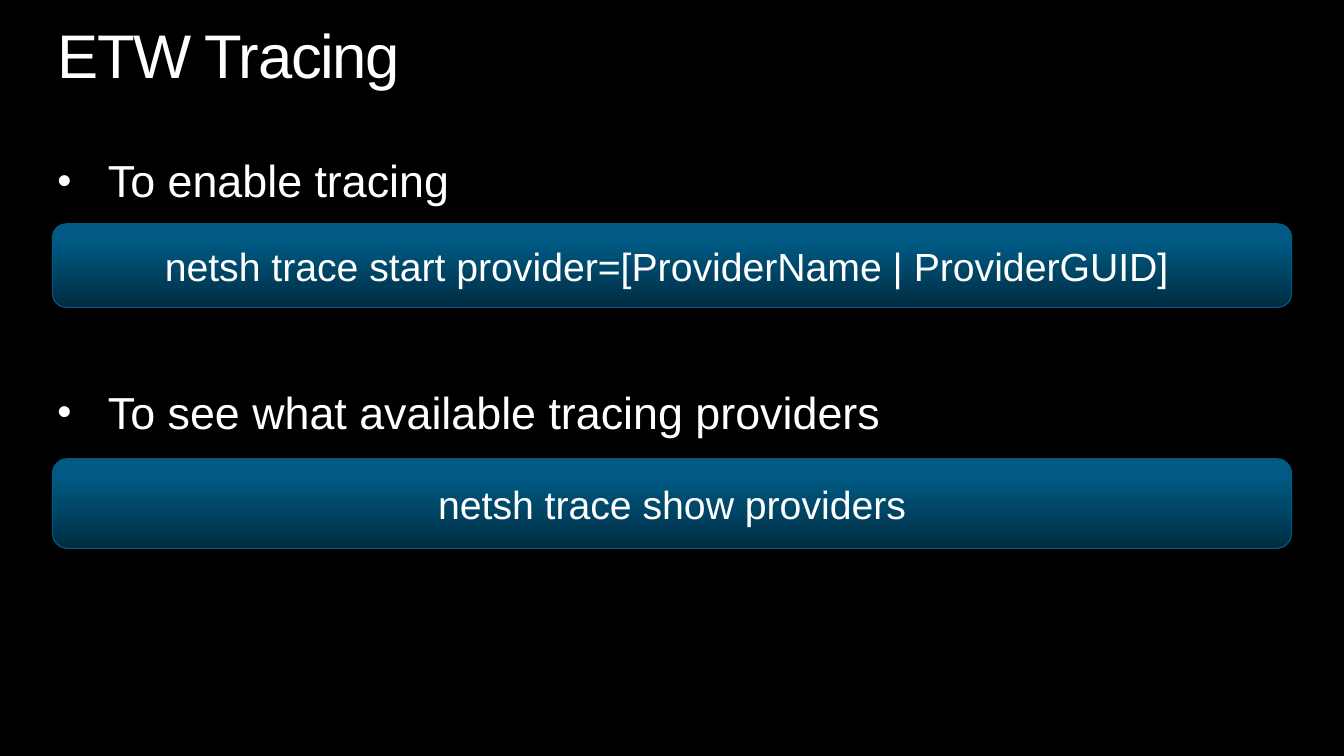
from lxml import etree
from pptx import Presentation
from pptx import util as u
from pptx.dml.color import RGBColor
from pptx.enum import shapes, text
from pptx.oxml.ns import qn

BLACK = RGBColor(0x00, 0x00, 0x00)
WHITE = RGBColor(0xFF, 0xFF, 0xFF)
BLUE = RGBColor(0x00, 0x5A, 0x84)
NAVY = RGBColor(0x00, 0x2D, 0x42)
FONT = "Arial"

SLIDE_W, SLIDE_H = 13.33, 7.5
TEXT_LEFT, TEXT_WIDTH = 0.57, 12.19
BAR_LEFT, BAR_WIDTH = 0.52, 12.29
BULLET_INDENT = 0.5
TOPIC_GAP = 130.5  # points between the two topics, leaving room for a bar

TOPICS = ["To enable tracing", "To see what available tracing providers"]
COMMANDS = [
    ("netsh trace start provider=[ProviderName | ProviderGUID] ", 2.22, 0.83),
    ("netsh trace show providers", 4.55, 0.89),
]


def inches(box):
    return [u.Inches(length) for length in box]


def add_run(paragraph, words, size):
    run = paragraph.add_run()
    run.text = words
    run.font.name = FONT
    run.font.size = u.Pt(size)
    run.font.color.rgb = WHITE
    return run


def add_frame(slide, box):
    """Add a wrapping text box without margins and return its text frame."""
    frame = slide.shapes.add_textbox(*inches(box)).text_frame
    frame.word_wrap = True
    frame.margin_left = frame.margin_right = 0
    frame.margin_top = frame.margin_bottom = 0
    return frame


def add_bullet(paragraph):
    properties = paragraph._p.get_or_add_pPr()
    indent = u.Inches(BULLET_INDENT)
    properties.set("marL", str(indent))
    properties.set("indent", str(-indent))
    etree.SubElement(properties, qn("a:buSzPct"), val="90000")
    etree.SubElement(properties, qn("a:buFont"), typeface=FONT)
    etree.SubElement(properties, qn("a:buChar"), char="•")


def add_title(slide, box):
    paragraph = add_frame(slide, box).paragraphs[0]
    paragraph.line_spacing = 0.9
    title = add_run(paragraph, "ETW Tracing", 44)
    title.font._element.set("spc", "-100")


def add_topics(slide, box):
    frame = add_frame(slide, box)
    for index, topic in enumerate(TOPICS):
        paragraph = frame.add_paragraph() if index else frame.paragraphs[0]
        add_bullet(paragraph)
        paragraph.line_spacing = 0.9
        if index:
            paragraph.space_before = u.Pt(TOPIC_GAP)
        add_run(paragraph, topic, 32)


def add_command(slide, box, command):
    bar = slide.shapes.add_shape(
        shapes.MSO_SHAPE.ROUNDED_RECTANGLE, *inches(box))
    bar.shadow.inherit = False
    bar.fill.gradient()
    bar.fill.gradient_angle = 90
    for stop, color, position in zip(
            bar.fill.gradient_stops, (NAVY, BLUE), (0, 0.8)):
        stop.color.rgb = color
        stop.position = position
    bar.line.color.rgb = BLUE
    bar.line.width = u.Pt(0.75)
    frame = bar.text_frame
    frame.word_wrap = True
    frame.vertical_anchor = text.MSO_ANCHOR.MIDDLE
    paragraph = frame.paragraphs[0]
    paragraph.alignment = text.PP_ALIGN.CENTER
    add_run(paragraph, command, 28)


def main():
    deck = Presentation()
    deck.slide_width, deck.slide_height = inches((SLIDE_W, SLIDE_H))
    slide = deck.slides.add_slide(deck.slide_layouts[6])
    slide.background.fill.solid()
    slide.background.fill.fore_color.rgb = BLACK

    add_title(slide, (TEXT_LEFT, 0.25, TEXT_WIDTH, 0.67))
    add_topics(slide, (TEXT_LEFT, 1.58, TEXT_WIDTH, 2.75))
    for command, top, height in COMMANDS:
        add_command(slide, (BAR_LEFT, top, BAR_WIDTH, height), command)
    deck.save("out.pptx")


if __name__ == "__main__":
    main()
